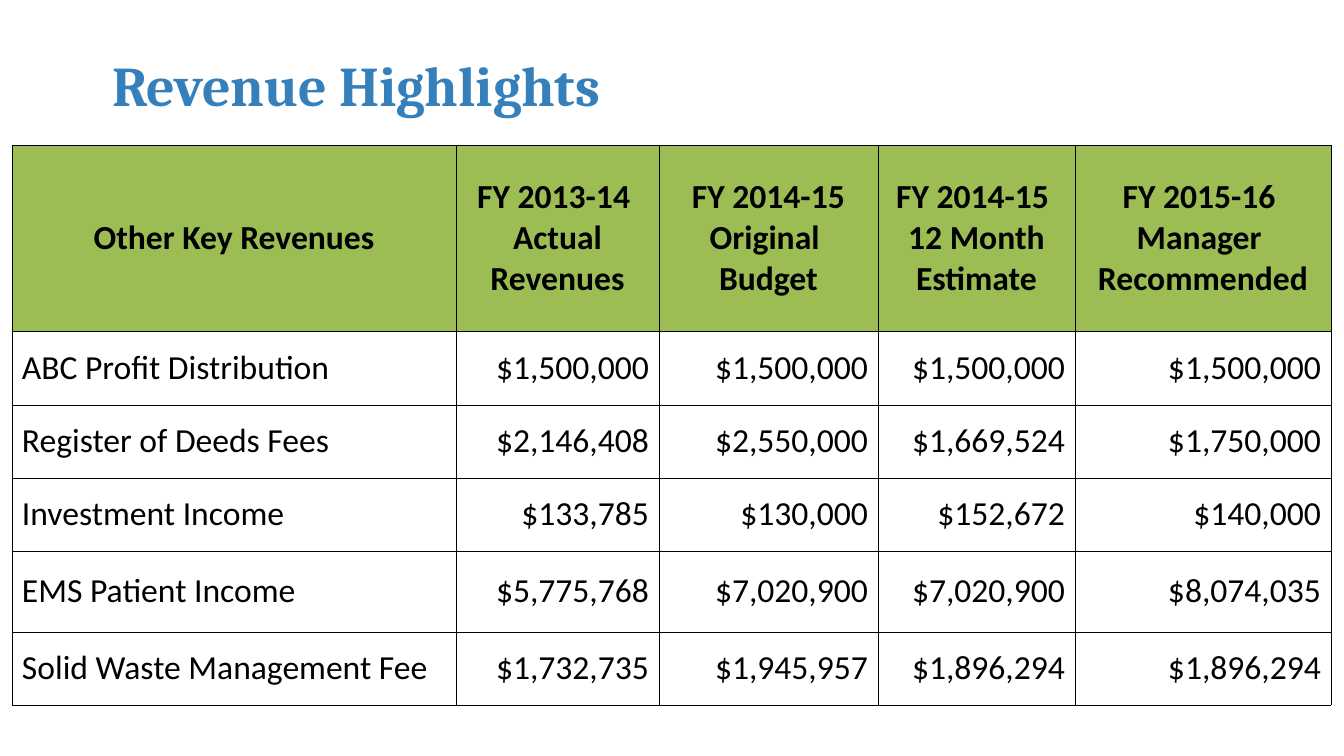
from lxml import etree
from pptx import Presentation
from pptx.dml.color import RGBColor
from pptx.enum import text
from pptx.oxml import ns
from pptx.util import Emu, Pt

TITLE = "Revenue Highlights"
HEADERS = [
    "Other Key Revenues",
    "FY 2013-14 \nActual Revenues",
    "FY 2014-15\nOriginal \nBudget",
    "FY 2014-15 \n12 Month\nEstimate",
    "FY 2015-16 \nManager \nRecommended",
]
REVENUES = [
    ("ABC Profit Distribution", "$1,500,000", "$1,500,000", "$1,500,000", "$1,500,000"),
    ("Register of Deeds Fees", "$2,146,408", "$2,550,000", "$1,669,524", "$1,750,000"),
    ("Investment Income", "$133,785", "$130,000", "$152,672", "$140,000"),
    ("EMS Patient Income", "$5,775,768", "$7,020,900", "$7,020,900", "$8,074,035"),
    ("Solid Waste Management Fee", "$1,732,735", "$1,945,957", "$1,896,294", "$1,896,294"),
]
COLUMN_WIDTHS = [444, 203, 219, 197, 256]
ROW_HEIGHTS = [186, 74, 73, 73, 81, 73]
BLUE, GREEN, WHITE, BLACK = "3580BB", "9CBD53", "FFFFFF", "000000"


def px(length):
    return Emu(round(length * 914400 / 100.8))


def color(value):
    return RGBColor.from_string(value)


def write(para, words, font, size, ink, bold):
    for index, line in enumerate(words.split("\n")):
        if index:
            para.add_line_break()
        span = para.add_run()
        span.text = line
        span.font.name = font
        span.font.size = Pt(size)
        span.font.bold = bold
        span.font.color.rgb = color(ink)


def draw_borders(cell):
    properties = cell._tc.get_or_add_tcPr()
    for side in ("a:lnL", "a:lnR", "a:lnT", "a:lnB"):
        border = etree.SubElement(properties, ns.qn(side), w=str(Pt(0.5)))
        fill = etree.SubElement(border, ns.qn("a:solidFill"))
        etree.SubElement(fill, ns.qn("a:srgbClr"), val=BLACK)


def fill_cell(cell, words, is_header, is_label):
    draw_borders(cell)
    cell.fill.solid()
    cell.fill.fore_color.rgb = color(GREEN if is_header else WHITE)
    cell.vertical_anchor = text.MSO_ANCHOR.MIDDLE
    cell.margin_left = cell.margin_right = px(1 if is_header else 10)
    cell.margin_top = px(1 if is_header else 5)
    cell.margin_bottom = px(0 if is_header else 5)
    para = cell.text_frame.paragraphs[0]
    if is_header:
        para.alignment = text.PP_ALIGN.CENTER
    else:
        para.alignment = text.PP_ALIGN.LEFT if is_label else text.PP_ALIGN.RIGHT
    write(para, words, "Calibri", 24, BLACK, is_header)


def add_title(page):
    title = page.shapes.title
    title.left, title.top, title.width, title.height = map(px, (102, 21, 1210, 126))
    title.text_frame.vertical_anchor = text.MSO_ANCHOR.MIDDLE
    para = title.text_frame.paragraphs[0]
    para.alignment = text.PP_ALIGN.LEFT
    write(para, TITLE, "Cambria", 40, BLUE, True)


def add_revenue_table(page):
    rows = [HEADERS, *REVENUES]
    frame = page.shapes.add_table(
        len(rows), len(HEADERS), px(12), px(145),
        px(sum(COLUMN_WIDTHS)), px(sum(ROW_HEIGHTS)))
    table = frame.table
    table.horz_banding = False
    for column, width in zip(table.columns, COLUMN_WIDTHS):
        column.width = px(width)
    for row, height in zip(table.rows, ROW_HEIGHTS):
        row.height = px(height)
    for i, row in enumerate(rows):
        for j, words in enumerate(row):
            fill_cell(table.cell(i, j), words, i == 0, j == 0)


def main():
    deck = Presentation()
    deck.slide_width, deck.slide_height = px(1344), px(756)
    page = deck.slides.add_slide(deck.slide_layouts[5])
    add_title(page)
    add_revenue_table(page)
    deck.save("out.pptx")


if __name__ == "__main__":
    main()
